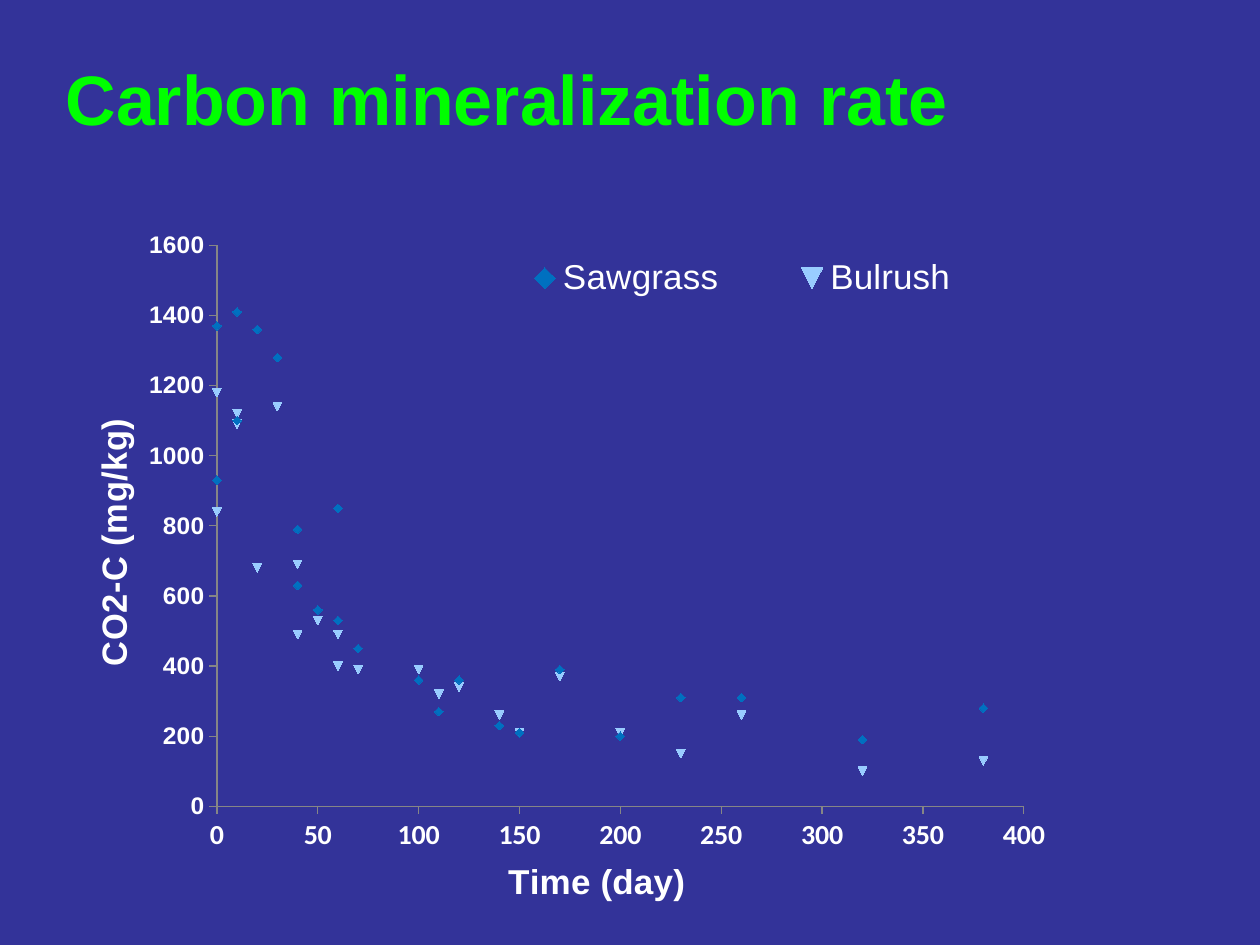
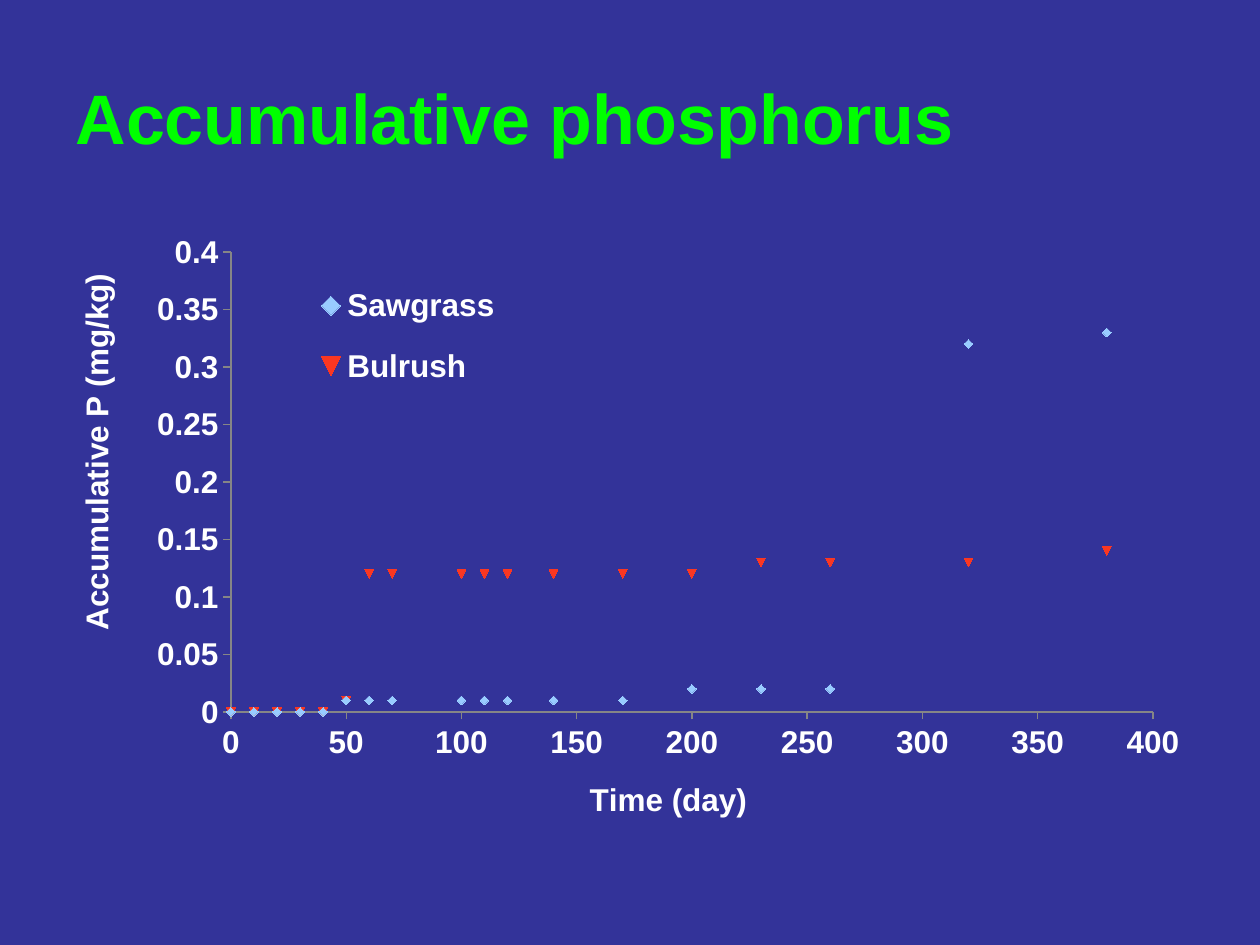
from dataclasses import dataclass

from lxml.etree import SubElement
from pptx import Presentation
from pptx.chart.data import XyChartData
from pptx.dml.color import RGBColor
from pptx.enum.chart import XL_CHART_TYPE as ChartType
from pptx.enum.chart import XL_LEGEND_POSITION as LegendPosition
from pptx.enum.chart import XL_TICK_MARK as TickMark
from pptx.enum.text import MSO_ANCHOR as Anchor
from pptx.enum.text import MSO_AUTO_SIZE as AutoSize
from pptx.enum.text import PP_ALIGN as Align
from pptx.oxml import parse_xml
from pptx.oxml.ns import nsdecls, qn
from pptx.util import Emu, Pt

PX = 914400 / 126  # EMU in one px


@dataclass(frozen=True)
class Theme:
    background: str = "333399"
    title: str = "00FF00"
    text: str = "FFFFFF"
    axis: str = "868686"
    blue: str = "0070C0"
    sky: str = "99CCFF"
    red: str = "FA3722"
    font: str = "Arial"
    number_font: str = "Calibri"
    title_size: int = 40
    large: int = 20
    medium: int = 18
    tick_x: int = 16
    tick_y: int = 14
    marker_size: int = 5
    axis_width: float = 0.75


class SlideBuilder:
    """Holds the deck style and the slide being built."""

    def __init__(self, deck, theme):
        self.deck, self.theme, self.slide = deck, theme, None
        fill = deck.slide_master.background.fill
        fill.solid()
        fill.fore_color.rgb = RGBColor.from_string(theme.background)

    def place(self, *lengths):
        return [Emu(round(length * PX)) for length in lengths]

    def style(self, font, size, bold=True, color=None, name=None):
        font.size, font.bold = Pt(size), bold
        font.name = name or self.theme.font
        font.color.rgb = RGBColor.from_string(color or self.theme.text)

    def add_slide(self, title, box):
        self.slide = self.deck.slides.add_slide(self.deck.slide_layouts[5])
        shape = self.slide.shapes.title
        shape.left, shape.top, shape.width, shape.height = self.place(*box)
        frame = shape.text_frame
        frame.auto_size, frame.vertical_anchor = AutoSize.NONE, Anchor.MIDDLE
        para = frame.paragraphs[0]
        para.alignment = Align.LEFT
        span = para.add_run()
        span.text = title
        self.style(span.font, self.theme.title_size, color=self.theme.title)

    def set_layout(self, element, before, box, extent, inner=False):
        """Pin a chart part, given in px of a chart with this extent."""
        for old in element.findall(qn("c:layout")):
            element.remove(old)
        layout = parse_xml(f"<c:layout {nsdecls('c')}><c:manualLayout/></c:layout>")
        settings = [("layoutTarget", "inner")] if inner else []
        settings += [("xMode", "edge"), ("yMode", "edge")]
        settings += [(side, f"{length / whole:.4f}")
                     for side, length, whole in zip("xywh", box, extent * 2)]
        for tag, value in settings:
            SubElement(layout[0], qn(f"c:{tag}")).set("val", value)
        element.find(qn(before)).addprevious(layout)

    def format_axis(self, axis, title, top, step, size, title_size, title_at,
                    extent, name=None):
        axis.minimum_scale, axis.maximum_scale, axis.major_unit = 0, top, step
        axis.has_major_gridlines = False
        axis.major_tick_mark, axis.minor_tick_mark = TickMark.OUTSIDE, TickMark.NONE
        axis.format.line.color.rgb = RGBColor.from_string(self.theme.axis)
        axis.format.line.width = Pt(self.theme.axis_width)
        axis.tick_labels.number_format = "General"
        axis.tick_labels.number_format_is_linked = False
        self.style(axis.tick_labels.font, size, name=name)
        span = axis.axis_title.text_frame.paragraphs[0].add_run()
        span.text = title
        self.style(span.font, title_size)
        self.set_layout(axis.axis_title._element, "c:overlay", title_at, extent)

    def add_scatter(self, box, days, series, plot_box):
        """series maps a name to its colour and values."""
        data = XyChartData()
        for name, (_, values) in series.items():
            points = data.add_series(name)
            for day, value in zip(days, values):
                points.add_data_point(day, value)
        chart = self.slide.shapes.add_chart(
            ChartType.XY_SCATTER, *self.place(*box), data).chart
        chart.has_title = False
        self.style(chart.font, self.theme.medium)
        plot = chart.plots[0]
        plot.vary_by_categories = False
        for drawn, (color, _) in zip(plot.series, series.values()):
            drawn.smooth = False
            drawn.format.line.fill.background()
            drawn.marker.size = self.theme.marker_size
            fill = drawn.marker.format.fill
            fill.solid()
            fill.fore_color.rgb = RGBColor.from_string(color)
            drawn.marker.format.line.fill.background()
        area = chart._chartSpace.chart.plotArea
        self.set_layout(area, "c:scatterChart", plot_box, box[2:], inner=True)
        return chart

    def add_legend(self, chart, box, extent, size, bold):
        chart.has_legend = True
        legend = chart.legend
        legend.position, legend.include_in_layout = LegendPosition.RIGHT, False
        self.style(legend.font, size, bold)
        self.set_layout(legend._element, "c:overlay", box, extent)


def add_mineralization(page, theme):
    page.add_slide("Carbon mineralization rate", (53, 42, 1134, 111))
    days = [0, 0, 10, 10, 20, 30, 40, 40, 50, 60, 60, 70, 100, 110, 120, 140,
            150, 170, 200, 230, 260, 320, 380]
    series = {
        "Sawgrass": (theme.blue, [
            930, 1370, 1100, 1410, 1360, 1280, 790, 630, 560, 850, 530, 450,
            360, 270, 360, 230, 210, 390, 200, 310, 310, 190, 280]),
        "Bulrush": (theme.sky, [
            840, 1180, 1090, 1120, 680, 1140, 690, 490, 530, 400, 490, 390,
            390, 320, 340, 260, 210, 370, 210, 150, 260, 100, 130]),
    }
    extent = (977, 703)
    chart = page.add_scatter((84, 210, *extent), days, series, (133, 36, 807, 571))
    page.format_axis(chart.category_axis, "Time (day)", 400, 50, theme.tick_x,
                     theme.large, (418, 655), extent, theme.number_font)
    page.format_axis(chart.value_axis, "CO2-C (mg/kg)", 1600, 200, theme.tick_y,
                     theme.large, (1, 210), extent)
    page.add_legend(chart, (379, 38, 559, 63), extent, theme.large, bold=False)


def add_phosphorus(page, theme):
    page.add_slide("Accumulative phosphorus", (63, 38, 1134, 158))
    days = [0, 10, 20, 30, 40, 40, 50, 60, 60, 70, 100, 110, 120, 140, 170,
            200, 230, 260, 320, 380]
    series = {
        "Sawgrass": (theme.sky,
                     [0] * 6 + [0.01] * 9 + [0.02] * 3 + [0.32, 0.33]),
        "Bulrush": (theme.red,
                    [0] * 6 + [0.01] + [0.12] * 9 + [0.13] * 3 + [0.14]),
    }
    extent = (1134, 624)
    chart = page.add_scatter((63, 220, *extent), days, series, (168, 32, 922, 460))
    page.format_axis(chart.category_axis, "Time (day)", 400, 50, theme.medium,
                     theme.medium, (521, 553), extent)
    page.format_axis(chart.value_axis, "Accumulative P (mg/kg)", 0.4, 0.05,
                     theme.medium, theme.medium, (7, 48), extent)
    page.add_legend(chart, (243, 43, 204, 146), extent, theme.medium, bold=True)


def main():
    deck = Presentation()
    deck.slide_width, deck.slide_height = Emu(round(1260 * PX)), Emu(round(945 * PX))
    theme = Theme()
    page = SlideBuilder(deck, theme)
    add_mineralization(page, theme)
    add_phosphorus(page, theme)
    deck.save("out.pptx")


if __name__ == "__main__":
    main()
